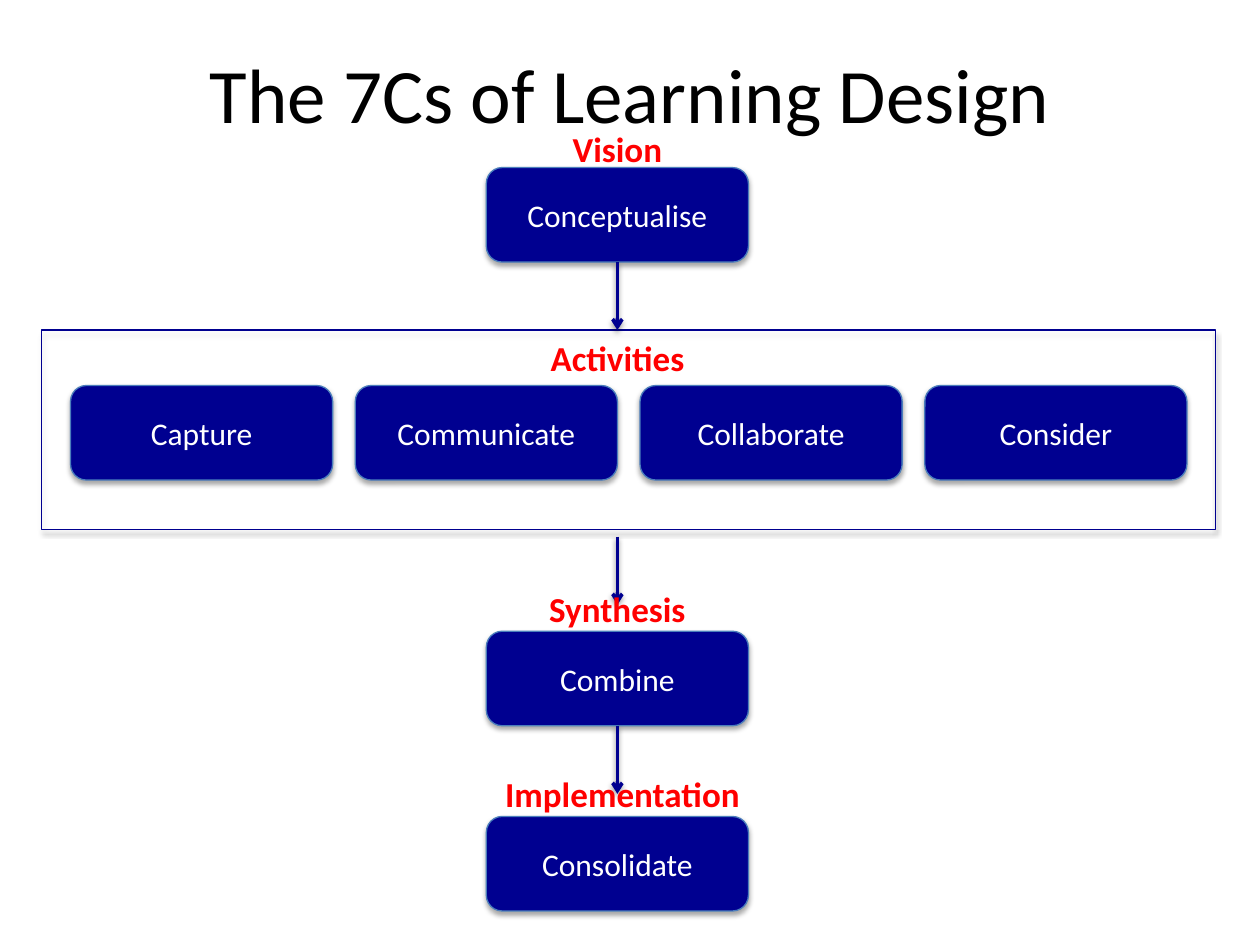
from dataclasses import dataclass
from lxml import etree
from pptx import Presentation
from pptx.dml.color import RGBColor
from pptx.enum.shapes import MSO_CONNECTOR, MSO_SHAPE
from pptx.enum.text import MSO_ANCHOR, MSO_AUTO_SIZE, PP_ALIGN
from pptx.oxml.ns import qn
from pptx.util import Inches, Pt

ROUND, RECT = MSO_SHAPE.ROUNDED_RECTANGLE, MSO_SHAPE.RECTANGLE
LINE = MSO_CONNECTOR.STRAIGHT
MIDDLE, TOP = MSO_ANCHOR.MIDDLE, MSO_ANCHOR.TOP
CENTER = PP_ALIGN.CENTER
FIT = MSO_AUTO_SIZE.SHAPE_TO_FIT_TEXT


@dataclass(frozen=True)
class Theme:
    font: str = "Calibri"
    navy: str = "000090"
    edge: str = "4B7EBC"
    red: str = "FF0000"
    white: str = "FFFFFF"
    black: str = "000000"
    title: int = 44
    label: int = 20
    box: int = 18


THEME = Theme()

# Content
TITLE = "The 7Cs of Learning Design"
STAGES = [("Conceptualise", 1.33), ("Combine", 5.01), ("Consolidate", 6.48)]
TASKS = ["Capture", "Communicate", "Collaborate", "Consider"]
LABELS = [  # text, centre, top, width
    ("Vision", 4.9, 0.96, 0.92),
    ("Activities", 4.9, 2.62, 1.29),
    ("Synthesis", 4.9, 4.61, 1.3),
    ("Implementation", 4.94, 6.08, 2.09),
]
ARROWS = [2.08, 4.26, 5.76]

# Grid, in inches
MID = 4.9
BOX_W, BOX_H = 2.08, 0.75
ROW_X, ROW_Y, STEP = 0.56, 3.06, 2.26
FRAME = (0.33, 2.62, 9.32, 1.58)
ARROW_H = 0.54
LABEL_H = 0.44

prs = Presentation()
prs.slide_width, prs.slide_height = Inches(10), Inches(7.5)
shapes = prs.slides.add_slide(prs.slide_layouts[6]).shapes


def color(code):
    return RGBColor.from_string(code)


def shade(shape, drop, alpha):
    """Give the shape a soft shadow straight below it."""
    props = shape._element.spPr
    list_ = props.find(qn("a:effectLst"))
    if list_ is None:
        list_ = etree.SubElement(props, qn("a:effectLst"))
    cast = etree.SubElement(list_, qn("a:outerShdw"), blurRad=str(Pt(3.1)),
                            dist=str(Pt(drop)), dir="5400000", rotWithShape="0")
    tint = etree.SubElement(cast, qn("a:srgbClr"), val=THEME.black)
    etree.SubElement(tint, qn("a:alpha"), val=str(alpha * 1000))


def write(shape, text, size, ink, bold=False, anchor=MIDDLE):
    frame = shape.text_frame
    frame.word_wrap = True
    frame.vertical_anchor = anchor
    para = frame.paragraphs[0]
    para.text, para.alignment = text, CENTER
    font = para.font
    font.name, font.size, font.bold = THEME.font, Pt(size), bold
    font.color.rgb = color(ink)
    return frame


def panel(kind, area, edge, fill=None):
    shape = shapes.add_shape(kind, *map(Inches, area))
    if fill:
        shape.fill.solid()
        shape.fill.fore_color.rgb = color(fill)
    else:
        shape.fill.background()
    shape.line.color.rgb = color(edge)
    shape.line.width = Pt(0.75)
    shape.shadow.inherit = False
    shade(shape, 1.8, 35)
    return shape


def box(text, left, top):
    shape = panel(ROUND, (left, top, BOX_W, BOX_H), THEME.edge, THEME.navy)
    write(shape, text, THEME.box, THEME.white)


def arrow(top):
    link = shapes.add_connector(
        LINE, *map(Inches, (MID, top, MID, top + ARROW_H)))
    link.line.color.rgb = color(THEME.navy)
    link.line.width = Pt(2)
    etree.SubElement(link.line._get_or_add_ln(), qn("a:tailEnd"), type="arrow")
    shade(link, 1.6, 38)


def label(text, mid, top, width):
    area = (mid - width / 2, top, width, LABEL_H)
    frame = write(shapes.add_textbox(*map(Inches, area)), text,
                  THEME.label, THEME.red, bold=True, anchor=TOP)
    frame.word_wrap = False
    frame.auto_size = FIT


for text, top in STAGES:
    box(text, MID - BOX_W / 2, top)
for col, text in enumerate(TASKS):
    box(text, ROW_X + col * STEP, ROW_Y)
panel(RECT, FRAME, THEME.navy)
for top in ARROWS:
    arrow(top)
head = shapes.add_textbox(*map(Inches, (0.5, 0.11, 9, 1.25)))
write(head, TITLE, THEME.title, THEME.black)
for item in LABELS:
    label(*item)

prs.save("out.pptx")
